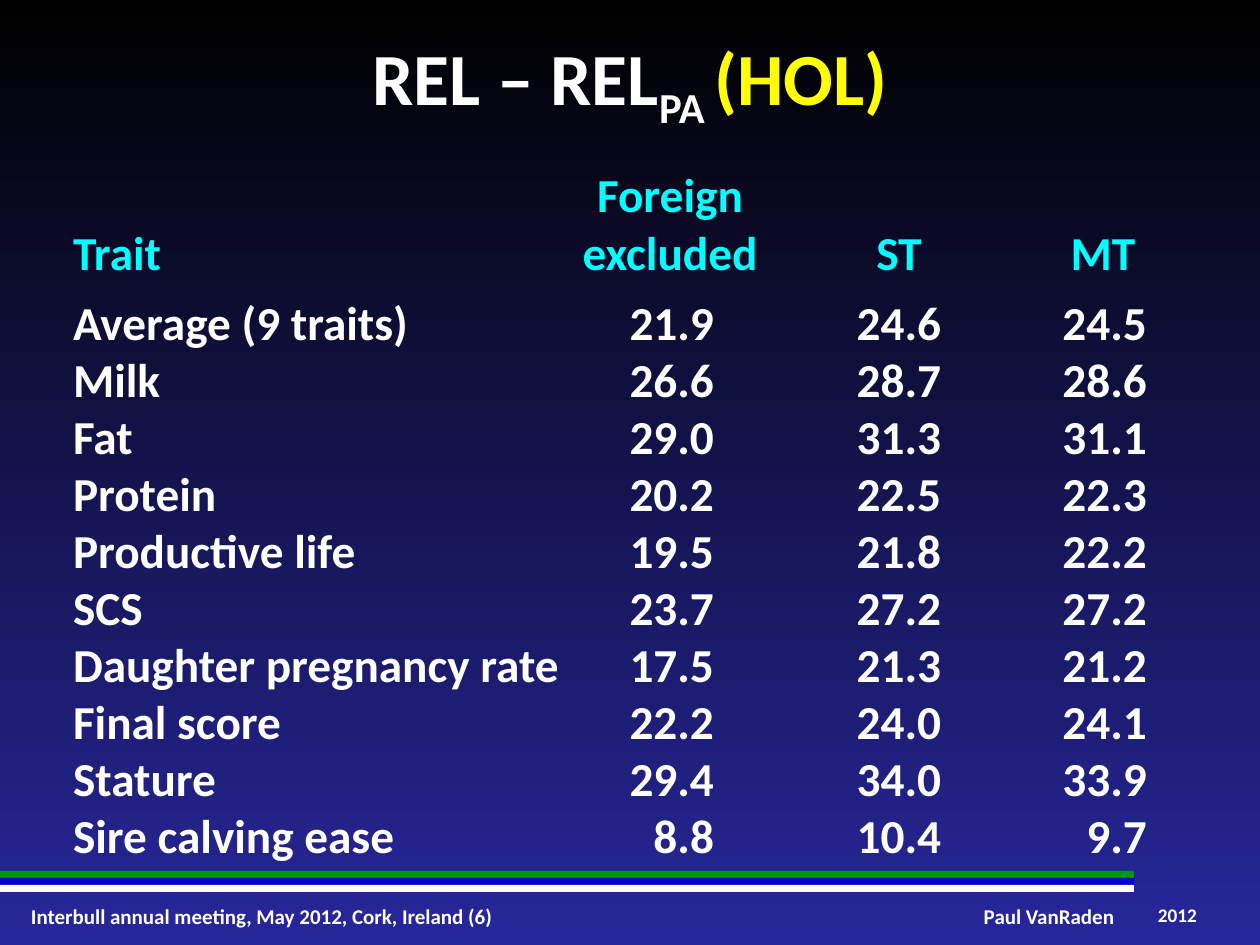
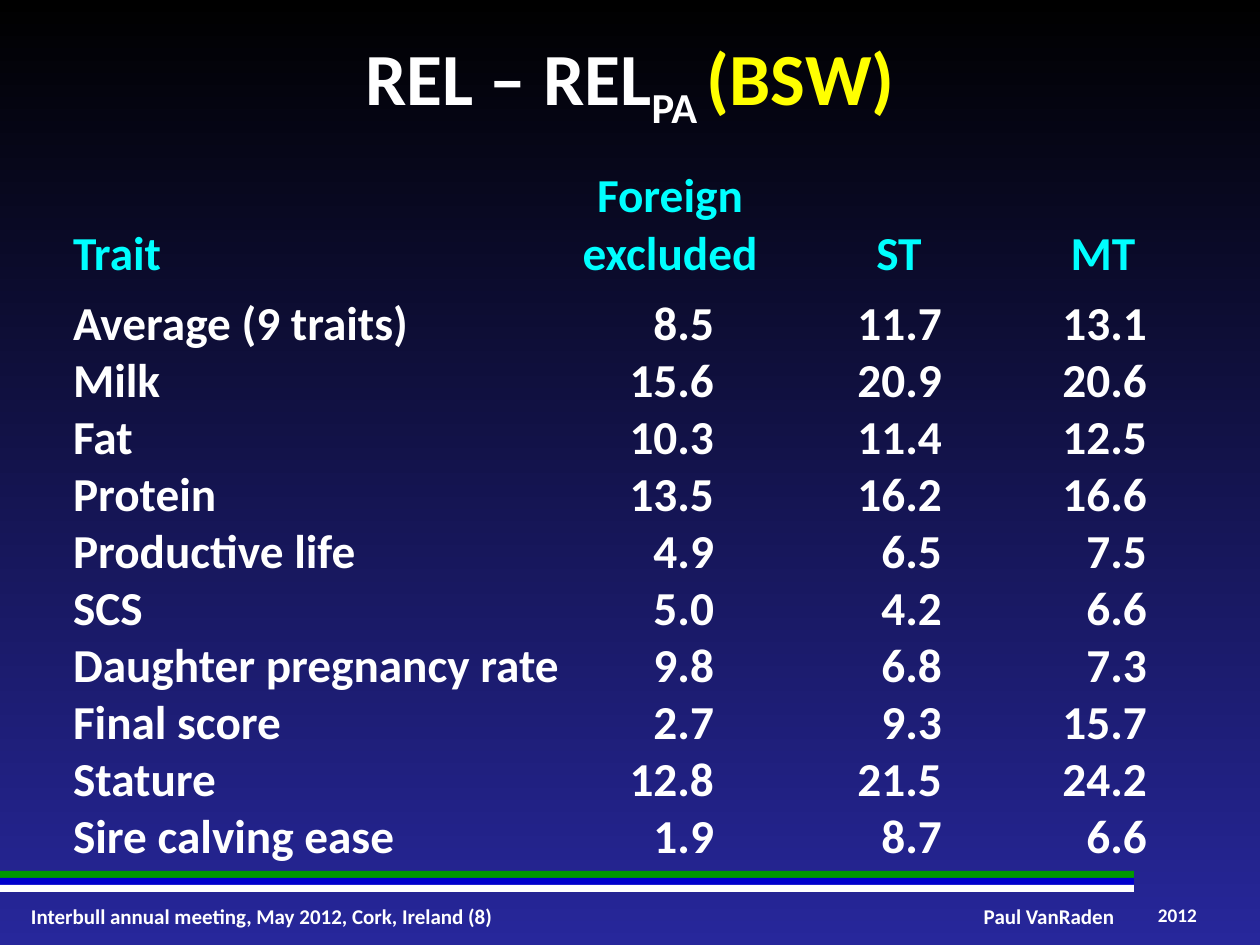
import pptx
import pptx.dml.color
import pptx.enum.shapes
import pptx.enum.text
import pptx.util

PX = 914400 / 126
FONT = "Calibri"
WHITE, CYAN, YELLOW = "FFFFFF", "00FFFF", "FFFF00"
SKY = ("000000", "27279B")
BANDS = ("009900", "0000CC", WHITE)
LEFT, CENTER, RIGHT = (pptx.enum.text.PP_ALIGN.LEFT, pptx.enum.text.PP_ALIGN.CENTER,
                       pptx.enum.text.PP_ALIGN.RIGHT)
TOP, MIDDLE, BOTTOM = (pptx.enum.text.MSO_ANCHOR.TOP, pptx.enum.text.MSO_ANCHOR.MIDDLE,
                       pptx.enum.text.MSO_ANCHOR.BOTTOM)
PLAIN_TABLE = "{2D5ABB26-0587-4C30-8999-92F81FD0307C}"

HEADINGS = ("Trait", "Foreign excluded", "ST", "MT")
COLUMN_WIDTHS = (490, 214, 244, 164)
HEADER_HEIGHT, ROW_HEIGHT, HEADER_GAP = 128, 57, 13
TRAITS = ("Average (9 traits)", "Milk", "Fat", "Protein", "Productive life", "SCS",
          "Daughter pregnancy rate", "Final score", "Stature", "Sire calving ease")
HOLSTEIN = (
    ("21.9", "24.6", "24.5"), ("26.6", "28.7", "28.6"), ("29.0", "31.3", "31.1"),
    ("20.2", "22.5", "22.3"), ("19.5", "21.8", "22.2"), ("23.7", "27.2", "27.2"),
    ("17.5", "21.3", "21.2"), ("22.2", "24.0", "24.1"), ("29.4", "34.0", "33.9"),
    ("8.8", "10.4", "9.7"))
BROWN_SWISS = (
    ("8.5", "11.7", "13.1"), ("15.6", "20.9", "20.6"), ("10.3", "11.4", "12.5"),
    ("13.5", "16.2", "16.6"), ("4.9", "6.5", "7.5"), ("5.0", "4.2", "6.6"),
    ("9.8", "6.8", "7.3"), ("2.7", "9.3", "15.7"), ("12.8", "21.5", "24.2"),
    ("1.9", "8.7", "6.6"))


def px(length):
    """Turn pixels into EMU."""
    return pptx.util.Emu(round(length * PX))


def rgb(code):
    """Turn a hex string into a colour."""
    return pptx.dml.color.RGBColor.from_string(code)


def add_run(paragraph, text, size, color=WHITE, baseline=None):
    """Add one bold run."""
    run = paragraph.add_run()
    run.text = text
    run.font.name, run.font.size, run.font.bold = FONT, pptx.util.Pt(size), True
    run.font.color.rgb = rgb(color)
    if baseline is not None:
        run.font._element.set("baseline", str(baseline * 1000))


def add_line(slide, box, align, anchor, wrap=True):
    """Add a text box without margins and return its paragraph."""
    frame = slide.shapes.add_textbox(*map(px, box)).text_frame
    frame.margin_left = frame.margin_top = frame.margin_right = frame.margin_bottom = 0
    frame.word_wrap, frame.vertical_anchor = wrap, anchor
    frame.paragraphs[0].alignment = align
    return frame.paragraphs[0]


def paint_background(slide):
    """Fill the slide with the vertical gradient."""
    fill = slide.background.fill
    fill.gradient()
    fill.gradient_angle = 270
    for stop, color in zip(fill.gradient_stops, SKY):
        stop.color.rgb = rgb(color)


def draw_footer(slide, box, page):
    """Draw the three bands and the footer line below them."""
    left, top, width, band_height = box
    for index, color in enumerate(BANDS):
        band = slide.shapes.add_shape(
            pptx.enum.shapes.MSO_SHAPE.RECTANGLE,
            *map(px, (left, top + index * band_height, width, band_height)))
        band.shadow.inherit = False
        band.fill.solid()
        band.fill.fore_color.rgb = rgb(color)
        band.line.fill.background()
    line_top = top + 32
    meeting = add_line(slide, (left + 31, line_top, 553, 26), LEFT, MIDDLE)
    add_run(meeting, f"Interbull annual meeting, May 2012, Cork, Ireland ({page})", 12)
    author = add_line(slide, (left + 983, line_top, 132, 26), CENTER, MIDDLE, wrap=False)
    add_run(author, "Paul VanRaden", 12)
    year = add_line(slide, (left + 1155, line_top, 45, 24), CENTER, MIDDLE)
    add_run(year, "2012", 11)


def draw_title(slide, box, breed):
    """Write the title with its subscript and the breed code."""
    title = add_line(slide, box, CENTER, TOP)
    add_run(title, "REL – REL", 42)
    add_run(title, "PA ", 42, baseline=-25)
    add_run(title, f"({breed})", 42, YELLOW)


def fill_cell(cell, text, color, align, anchor, right=0, bottom=0):
    """Write one unfilled table cell."""
    cell.fill.background()
    cell.margin_left = cell.margin_top = 0
    cell.margin_right, cell.margin_bottom = px(right), px(bottom)
    cell.vertical_anchor = anchor
    paragraph = cell.text_frame.paragraphs[0]
    paragraph.alignment = align
    add_run(paragraph, text, 27, color)


def draw_reliabilities(slide, origin, gains, st_format):
    """Draw the table of reliability gains by trait."""
    left, top = origin
    height = HEADER_HEIGHT + len(TRAITS) * ROW_HEIGHT
    table = slide.shapes.add_table(
        len(TRAITS) + 1, len(HEADINGS),
        *map(px, (left, top, sum(COLUMN_WIDTHS), height))).table
    table.first_row = table.horz_banding = False
    table._tbl.tblPr[0].text = PLAIN_TABLE
    for column, width in zip(table.columns, COLUMN_WIDTHS):
        column.width = px(width)
    for index, row in enumerate(table.rows):
        row.height = px(ROW_HEIGHT if index else HEADER_HEIGHT)
    for column, heading in enumerate(HEADINGS):
        fill_cell(table.cell(0, column), heading, CYAN, CENTER if column else LEFT,
                  BOTTOM, bottom=HEADER_GAP)
    formats = ((LEFT, 0), (RIGHT, 63), st_format, (RIGHT, 38))
    for row, (trait, values) in enumerate(zip(TRAITS, gains), 1):
        for column, (text, (align, inset)) in enumerate(zip((trait, *values), formats)):
            fill_cell(table.cell(row, column), text, WHITE, align, TOP, right=inset)


def build_breed_slide(deck, breed, page, gains, st_format):
    """Build the slide of one breed."""
    slide = deck.slides.add_slide(deck.slide_layouts[6])
    paint_background(slide)
    draw_footer(slide, (0, 871, 1134, 7), page)
    draw_title(slide, (63, 32, 1134, 126), breed)
    draw_reliabilities(slide, (73, 168), gains, st_format)


def main():
    """Build and save the deck."""
    deck = pptx.Presentation()
    deck.slide_width, deck.slide_height = px(1260), px(945)
    build_breed_slide(deck, "HOL", 6, HOLSTEIN, (CENTER, 0))
    build_breed_slide(deck, "BSW", 8, BROWN_SWISS, (RIGHT, 79))
    deck.save("out.pptx")


if __name__ == "__main__":
    main()
